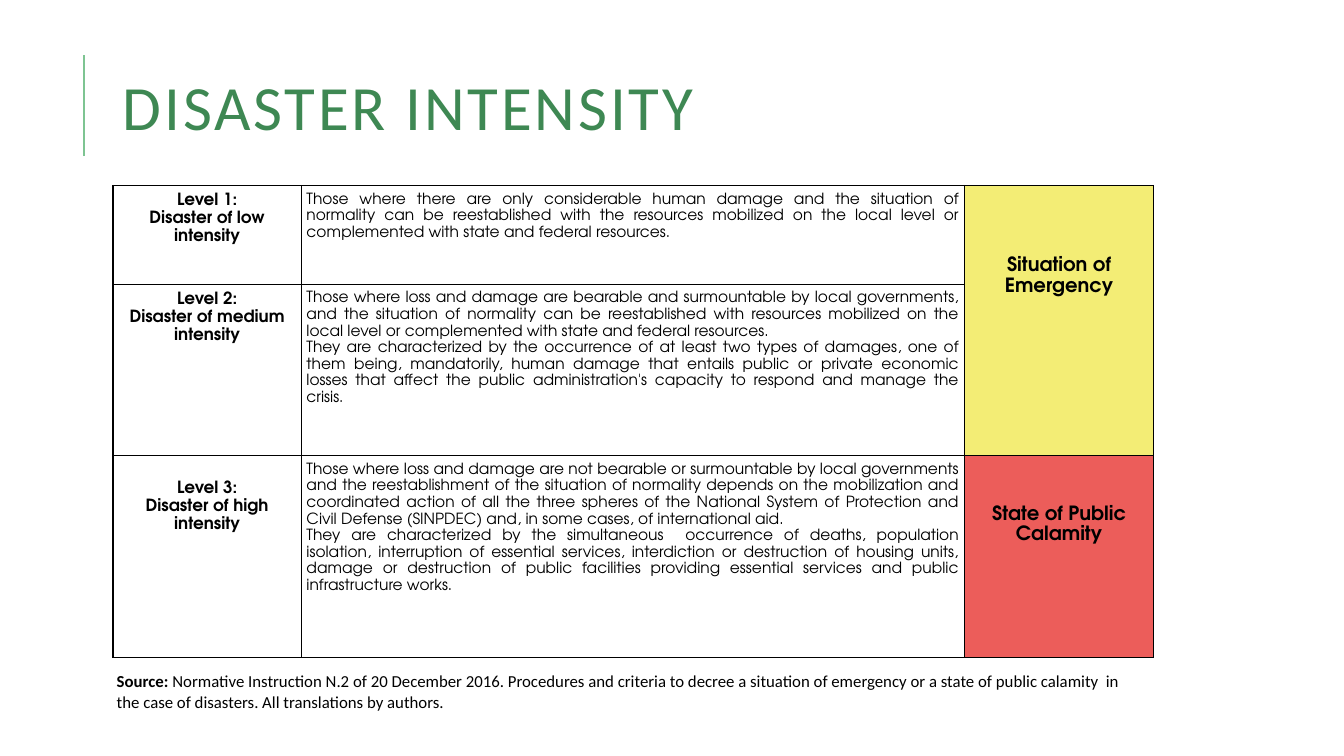
"""Build the disaster intensity slide with its table of levels."""
from lxml.etree import SubElement
from pptx import Presentation
from pptx.dml.color import RGBColor
from pptx.enum.shapes import MSO_CONNECTOR
from pptx.enum.text import MSO_ANCHOR, PP_ALIGN
from pptx.oxml.ns import qn
from pptx.util import Inches, Pt


def color(code):
    return RGBColor.from_string(code)


def style(run, face, size, code, bold=False):
    font = run.font
    font.name, font.size, font.bold = face, Pt(size), bold
    font.color.rgb = color(code)


deck = Presentation()
deck.slide_width, deck.slide_height = Inches(13.33), Inches(7.5)
slide = deck.slides.add_slide(deck.slide_layouts[6])
shapes = slide.shapes

rule = shapes.add_connector(
    MSO_CONNECTOR.STRAIGHT, Inches(0.83), Inches(1.55), Inches(0.83), Inches(0.55))
rule.line.color.rgb = color("7EC492")
rule.line.width = Pt(1.5)
SubElement(rule._element.spPr, qn("a:effectLst"))

title = shapes.add_textbox(Inches(1.12), Inches(0.29), Inches(10.63), Inches(1.64))
frame = title.text_frame
frame.word_wrap = True
frame.vertical_anchor = MSO_ANCHOR.MIDDLE
frame.text = "DISASTER INTENSITY"
head = frame.paragraphs[0]
head.line_spacing = 0.8
style(head.runs[0], "Calibri", 45, "3E8853")
head.runs[0].font._element.set("spc", "200")

levels = [
    ["Level 1:", "Disaster of low intensity"],
    ["Level 2:", "Disaster of medium intensity"],
    ["Level 3:", "Disaster of high intensity"],
]
details = [
    ["Those where there are only considerable human damage and the situation of "
     "normality can be reestablished with the resources mobilized on the local level "
     "or complemented with state and federal resources."],
    ["Those where loss and damage are bearable and surmountable by local governments, "
     "and the situation of normality can be reestablished with resources mobilized on "
     "the local level or complemented with state and federal resources.",
     "They are characterized by the occurrence of at least two types of damages, one of "
     "them being, mandatorily, human damage that entails public or private economic "
     "losses that affect the public administration's capacity to respond and manage "
     "the crisis."],
    ["Those where loss and damage are not bearable or surmountable by local governments "
     "and the reestablishment of the situation of normality depends on the mobilization "
     "and coordinated action of all the three spheres of the National System of "
     "Protection and Civil Defense (SINPDEC) and, in some cases, of international aid.",
     "They are characterized by the simultaneous  occurrence of deaths, population "
     "isolation, interruption of essential services, interdiction or destruction of "
     "housing units, damage or destruction of public facilities providing essential "
     "services and public infrastructure works."],
]
states = [["Situation of Emergency"], [], ["State of Public Calamity"]]
fills = ["F3ED75", "F3ED75", "EC5D5A"]
tops = [(0.05, 0.05, 0.68), (0.05, 0.05, 0.05), (0.23, 0.05, 0.47)]
looks = [(12, True, PP_ALIGN.CENTER), (11, False, PP_ALIGN.JUSTIFY),
         (14, True, PP_ALIGN.CENTER)]

table = shapes.add_table(
    3, 3, Inches(1.12), Inches(1.84), Inches(10.32), Inches(4.68)).table
table.first_row = table.horz_banding = False
for column, width in zip(table.columns, (1.87, 6.58, 1.87)):
    column.width = Inches(width)
for row, height in zip(table.rows, (0.98, 1.7, 2)):
    row.height = Inches(height)
table.cell(0, 2).merge(table.cell(1, 2))

for r, row in enumerate(zip(levels, details, states)):
    for c, lines in enumerate(row):
        cell = table.cell(r, c)
        cell.margin_left = cell.margin_right = cell.margin_bottom = Inches(0.05)
        cell.margin_top = Inches(tops[r][c])
        props = cell._tc.get_or_add_tcPr()
        for side in ("a:lnL", "a:lnR", "a:lnT", "a:lnB"):
            edge = SubElement(props, qn(side), w=str(Pt(1)))
            paint = SubElement(edge, qn("a:solidFill"))
            SubElement(paint, qn("a:srgbClr"), val="000000")
        if c == 2:
            cell.fill.solid()
            cell.fill.fore_color.rgb = color(fills[r])
        else:
            cell.fill.background()
        if not lines:
            continue
        cell.text_frame.text = "\n".join(lines)
        size, bold, align = looks[c]
        for para in cell.text_frame.paragraphs:
            para.alignment = align
            para.line_spacing = 1.15
            style(para.runs[0], "TeX Gyre Adventor", size, "000000", bold)

source = shapes.add_textbox(Inches(1.06), Inches(6.61), Inches(10.33), Inches(0.5))
source.text_frame.word_wrap = True
note = source.text_frame.paragraphs[0]
for text, bold in (
    ("Source: ", True),
    ("Normative Instruction N.2 of 20 December 2016. Procedures and criteria to decree "
     "a situation of emergency or a state of public calamity  in the case of disasters. "
     "All translations by authors.", False),
):
    run = note.add_run()
    run.text = text
    style(run, "Calibri", 12, "000000", bold)

deck.save("out.pptx")
